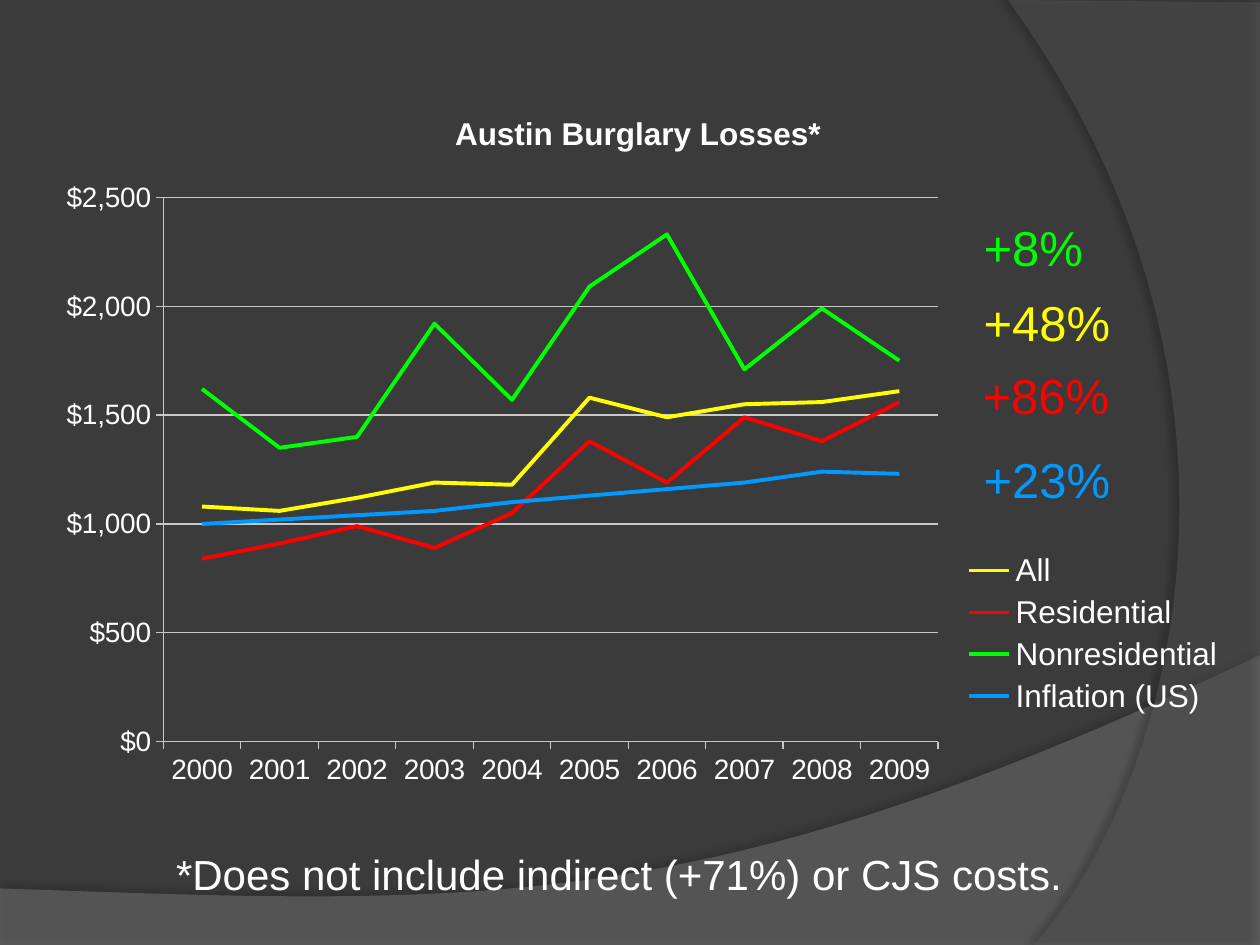
from lxml import etree
from pptx import Presentation
from pptx.chart.data import CategoryChartData
from pptx.dml.color import RGBColor
from pptx.enum.chart import XL_CHART_TYPE, XL_LEGEND_POSITION, XL_TICK_MARK
from pptx.enum.text import MSO_AUTO_SIZE
from pptx.oxml.ns import qn
from pptx.util import Cm, Pt

LINE_CHART = XL_CHART_TYPE.LINE
LEGEND_RIGHT = XL_LEGEND_POSITION.RIGHT
TICK_OUT, TICK_NONE = XL_TICK_MARK.OUTSIDE, XL_TICK_MARK.NONE
FIT_SHAPE = MSO_AUTO_SIZE.SHAPE_TO_FIT_TEXT

FONT = "Arial"
COLORS = {
    "background": "3B3B3B", "wave": "7F7F7F", "arc": "5E5E5E",
    "shadow": "000000", "text": "FFFFFF", "grid": "C8C8C8",
    "All": "FFFF00", "Residential": "FF0000",
    "Nonresidential": "00FF00", "Inflation (US)": "0099FF",
}
YEARS = [str(year) for year in range(2000, 2010)]
LOSSES = {
    "All": (1080, 1060, 1120, 1190, 1180, 1580, 1490, 1550, 1560, 1610),
    "Residential": (840, 910, 990, 890, 1050, 1380, 1190, 1490, 1380, 1560),
    "Nonresidential": (1620, 1350, 1400, 1920, 1570, 2090, 2330, 1710, 1990, 1750),
    "Inflation (US)": (1000, 1020, 1040, 1060, 1100, 1130, 1160, 1190, 1240, 1230),
}
# Series, change since 2000, left, top and width in cm
CHANGES = [
    ("Residential", "+86%", 19.56, 7.24, 3.1),
    ("Nonresidential", "+8%", 19.58, 4.27, 2.54),
    ("Inflation (US)", "+23%", 19.58, 8.94, 3.1),
    ("All", "+48%", 19.58, 5.77, 3.1),
]


def rgb(name):
    return RGBColor.from_string(COLORS[name])


def set_font(font, size, color="text", bold=False):
    for attribute, value in {"name": FONT, "size": Pt(size), "bold": bold}.items():
        setattr(font, attribute, value)
    font.color.rgb = rgb(color)


def bezier(start, control1, control2, end, steps=40):
    """Points along a cubic curve, without its start."""
    points = []
    for step in range(1, steps + 1):
        t = step / steps
        weights = ((1 - t) ** 3, 3 * t * (1 - t) ** 2, 3 * t * t * (1 - t), t ** 3)
        corners = (start, control1, control2, end)
        points.append(tuple(sum(w * c[axis] for w, c in zip(weights, corners))
                            for axis in (0, 1)))
    return points


def add_swoosh(slide, color, opacity, points, shadow_opacity, distance, direction):
    outline = [(Cm(x), Cm(y)) for x, y in points]
    builder = slide.shapes.build_freeform(*outline[0])
    builder.add_line_segments(outline[1:], close=True)
    swoosh = builder.convert_to_shape()
    swoosh.fill.solid()
    swoosh.fill.fore_color.rgb = rgb(color)
    swoosh.line.fill.background()
    swoosh.shadow.inherit = False

    # Transparency and soft edge shadow
    properties = swoosh._element.spPr
    fill_color = properties.find(qn("a:solidFill")).find(qn("a:srgbClr"))
    shadow = etree.SubElement(
        properties.find(qn("a:effectLst")), qn("a:outerShdw"),
        blurRad=str(Pt(4)), dist=str(Pt(distance)), dir=str(direction * 60000),
        algn="ctr", rotWithShape="0")
    shadow_color = etree.SubElement(shadow, qn("a:srgbClr"), val=COLORS["shadow"])
    for element, percent in ((fill_color, opacity), (shadow_color, shadow_opacity)):
        etree.SubElement(element, qn("a:alpha"), val=str(percent * 1000))


def place(element, index, inner=False, **fractions):
    """Give a chart part a fixed place, in fractions of the chart."""
    for old in element.findall(qn("c:layout")):
        element.remove(old)
    layout = etree.Element(qn("c:layout"))
    manual = etree.SubElement(layout, qn("c:manualLayout"))
    if inner:
        etree.SubElement(manual, qn("c:layoutTarget"), val="inner")
    for side in ("x", "y"):
        etree.SubElement(manual, qn(f"c:{side}Mode"), val="edge")
    for key, value in fractions.items():
        etree.SubElement(manual, qn(f"c:{key}"), val=str(value))
    element.insert(index, layout)


def style_line(line, color, width):
    line.color.rgb = rgb(color)
    line.width = Pt(width)


def add_losses_chart(slide):
    data = CategoryChartData(number_format='"$"#,##0')
    data.categories = YEARS
    for name, values in LOSSES.items():
        data.add_series(name, values)
    chart = slide.shapes.add_chart(
        LINE_CHART, Cm(0.89), Cm(2.01), Cm(24.03), Cm(14.07), data).chart
    set_font(chart.font, 10)

    # Title and legend
    chart.has_title = True
    title = chart.chart_title
    title.text_frame.text = "Austin Burglary Losses*"
    set_font(title.text_frame.paragraphs[0].runs[0].font, 18, bold=True)
    chart.has_legend = True
    legend = chart.legend
    legend.position = LEGEND_RIGHT
    legend.include_in_layout = False
    set_font(legend.font, 18)

    # Axes
    for axis in (chart.category_axis, chart.value_axis):
        axis.major_tick_mark = TICK_OUT
        axis.minor_tick_mark = TICK_NONE
        set_font(axis.tick_labels.font, 16)
        style_line(axis.format.line, "grid", 0.75)
    losses_axis = chart.value_axis
    scale = {"minimum_scale": 0, "maximum_scale": 2500, "major_unit": 500,
             "has_major_gridlines": True}
    for attribute, value in scale.items():
        setattr(losses_axis, attribute, value)
    style_line(losses_axis.major_gridlines.format.line, "grid", 0.75)
    losses_axis.tick_labels.number_format = '"$"#,##0'
    losses_axis.tick_labels.number_format_is_linked = False

    # Series
    plot = chart.plots[0]
    plot.vary_by_categories = False
    for series in plot.series:
        series.smooth = False
        style_line(series.format.line, series.name, 2.25)

    place(title._element, 1, x=0.34, y=0.01)
    place(legend._element, 1, x=0.77, y=0.64, w=0.22, h=0.25)
    place(chart._chartSpace.chart.plotArea, 0, inner=True,
          x=0.1, y=0.14, w=0.65, h=0.78)


def add_label(slide, text, left, top, width, height, size, color):
    box = slide.shapes.add_textbox(Cm(left), Cm(top), Cm(width), Cm(height))
    frame = box.text_frame
    frame.word_wrap = False
    frame.auto_size = FIT_SHAPE
    frame.text = text
    set_font(frame.paragraphs[0].runs[0].font, size, color)


def main():
    deck = Presentation()
    deck.slide_width, deck.slide_height = Cm(25.4), Cm(19.05)
    slide = deck.slides.add_slide(deck.slide_layouts[6])
    slide.background.fill.solid()
    slide.background.fill.fore_color.rgb = rgb("background")

    # Backdrop
    wave = [(0, 17.91), (0, 19.08), (25.4, 19.08), (25.4, 13.21)]
    wave += bezier(wave[-1], (14.2, 18.52), (9.93, 18.26), wave[0])
    add_swoosh(slide, "wave", 45, wave, 35, 3.5, 270)
    arc = [(25.4, 0.05), (25.4, 19.05), (20.85, 19.05)]
    arc += bezier(arc[-1], (23.75, 15.72), (25.86, 7.62), (20.32, 0))
    add_swoosh(slide, "arc", 40, arc, 45, 4, 180)

    # Chart, change per series and footnote
    add_losses_chart(slide)
    for series, change, left, top, width in CHANGES:
        add_label(slide, change, left, top, width, 1.45, 28, series)
    add_label(slide, "*Does not include indirect (+71%) or CJS costs.",
              3.3, 16.99, 18.8, 1.27, 24, "text")

    deck.save("out.pptx")


if __name__ == "__main__":
    main()
